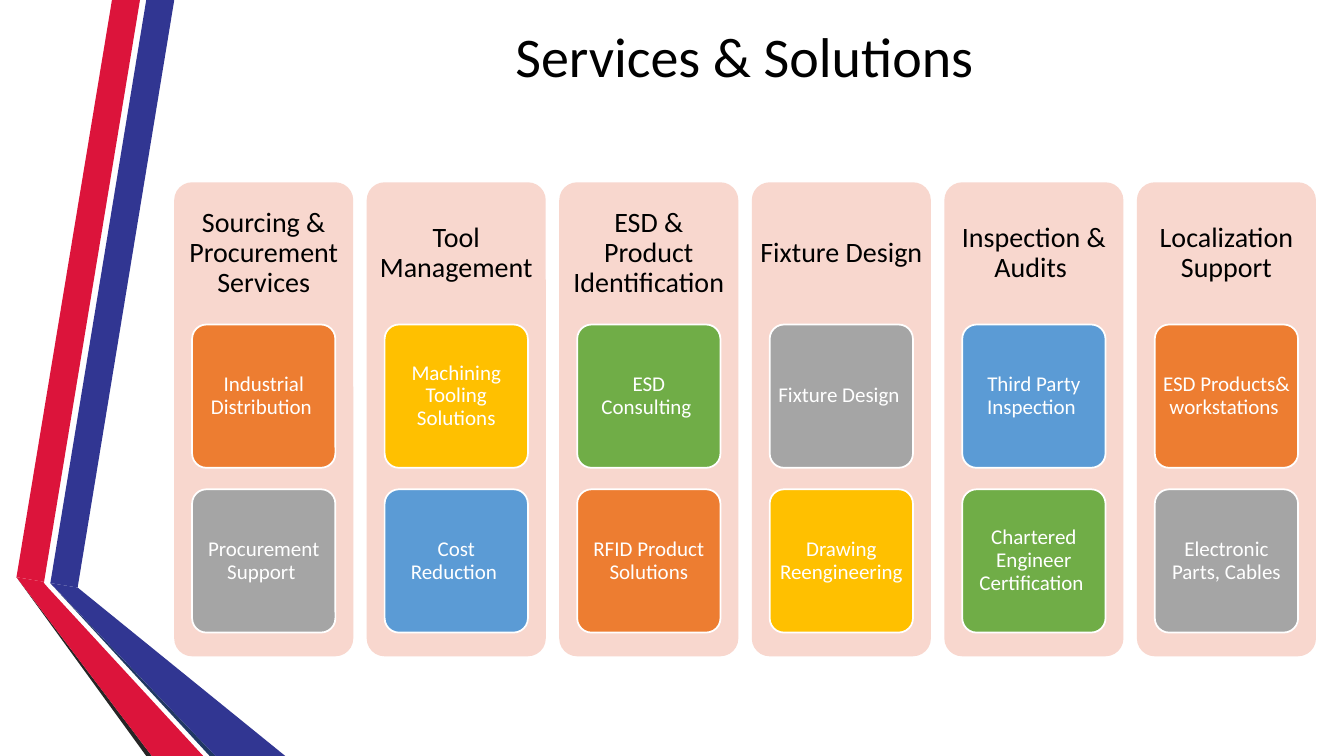
from itertools import cycle

from pptx import Presentation
from pptx.dml.color import RGBColor
from pptx.enum import shapes, text
from pptx.util import Pt

RED, BLUE, PALE, WHITE, BLACK = "DC143B", "313692", "F8D7CE", "FFFFFF", "000000"
TILE_COLOURS = ["ED7D31", "A5A5A5", "FFC000", "5B9BD5", "70AD47"]

# Ribbon outlines in points, back to front
RIBBON = [
    (BLUE, [(36, 416.5), (55.5, 419.7), (124.5, 0), (104.5, 0)]),
    (RED, [(100, 0), (80, 0), (11.8, 412.3), (31.5, 415.6)]),
    ("262626", [(11.8, 412.3), (104.5, 540), (108.5, 540)]),
    ("203864", [(36, 416.6), (149.8, 540), (154, 540)]),
    (BLUE, [(36, 416.5), (154, 540), (203.8, 540), (55.5, 419.7)]),
    (RED, [(145.2, 540), (34.5, 420), (31.2, 416.2), (31.5, 415.6), (11.8, 412.3), (108.5, 540)]),
]

SERVICES = [
    ("Sourcing & Procurement Services", ["Industrial Distribution ", "Procurement Support "]),
    ("Tool Management", ["Machining Tooling Solutions", "Cost Reduction "]),
    ("ESD & Product Identification", ["ESD Consulting ", "RFID Product Solutions"]),
    ("Fixture Design ", ["Fixture Design ", "Drawing Reengineering"]),
    ("Inspection & Audits ", ["Third Party Inspection ", "Chartered Engineer Certification "]),
    ("Localization Support", ["ESD Products& workstations ", "Electronic Parts, Cables"]),
]


def rgb(hex_colour):
    return RGBColor.from_string(hex_colour)


def write(sp, words, size, colour, inset_x, inset_y):
    tf = sp.text_frame
    frame_format = {
        "word_wrap": True, "auto_size": text.MSO_AUTO_SIZE.NONE,
        "vertical_anchor": text.MSO_ANCHOR.MIDDLE,
        "margin_left": Pt(inset_x), "margin_right": Pt(inset_x),
        "margin_top": Pt(inset_y), "margin_bottom": Pt(inset_y),
    }
    for name, value in frame_format.items():
        setattr(tf, name, value)
    p = tf.paragraphs[0]
    p.alignment, p.line_spacing = text.PP_ALIGN.CENTER, 0.9
    r = p.add_run()
    r.text = words
    for name, value in {"name": "Calibri", "size": Pt(size), "bold": False}.items():
        setattr(r.font, name, value)
    r.font.color.rgb = rgb(colour)


def paint(sp, fill, line=None):
    sp.shadow.inherit = False
    sp.fill.solid()
    sp.fill.fore_color.rgb = rgb(fill)
    if line:
        sp.line.color.rgb = rgb(line)
        sp.line.width = Pt(1.25)
    else:
        sp.line.fill.background()


def add_card(s, x, y, w, h, fill, line=None):
    sp = s.shapes.add_shape(shapes.MSO_SHAPE.ROUNDED_RECTANGLE, Pt(x), Pt(y), Pt(w), Pt(h))
    sp.adjustments[0] = 0.1
    paint(sp, fill, line)
    return sp


def add_ribbon(s, x, y):
    for colour, outline in RIBBON:
        points = [(Pt(x + px), Pt(y + py)) for px, py in outline]
        builder = s.shapes.build_freeform(*points[0], scale=1.0)
        builder.add_line_segments(points[1:], close=True)
        paint(builder.convert_to_shape(), colour)


def add_title(s, x, y, w, h):
    sp = s.shapes.title
    for name, value in {"left": x, "top": y, "width": w, "height": h}.items():
        setattr(sp, name, Pt(value))
    write(sp, "Services & Solutions", 40, BLACK, 7.2, 3.6)


def add_service(s, x, y, w, h, heading, tiles, colours):
    # Panel and heading
    add_card(s, x, y, w, h, PALE)
    header_h = 0.3 * h
    sp = s.shapes.add_textbox(Pt(x), Pt(y), Pt(w), Pt(header_h))
    write(sp, heading, 20, BLACK, 5.76, 5.76)
    # Square tiles stacked below the heading
    side = 0.8 * w
    for i, words in enumerate(tiles):
        top = y + header_h + i * 1.15 * side
        tile = add_card(s, x + 0.1 * w, top, side, side, next(colours), WHITE)
        write(tile, words, 15, WHITE, 2.88, 2.16)


def add_services(s, x, y, w, h):
    # Column gaps are 7.5 % of a column's width
    column_w = w / (len(SERVICES) + 0.075 * (len(SERVICES) - 1))
    colours = cycle(TILE_COLOURS)
    for i, (heading, tiles) in enumerate(SERVICES):
        add_service(s, x + i * 1.075 * column_w, y, column_w, h, heading, tiles, colours)


def main():
    prs = Presentation()
    prs.slide_width, prs.slide_height = Pt(960), Pt(540)
    s = prs.slides.add_slide(prs.slide_layouts[5])
    add_ribbon(s, 0, 0)
    add_title(s, 123.8, 0, 815.8, 84.2)
    add_services(s, 124.4, 130.2, 815.6, 338.6)
    prs.save("out.pptx")


if __name__ == "__main__":
    main()
